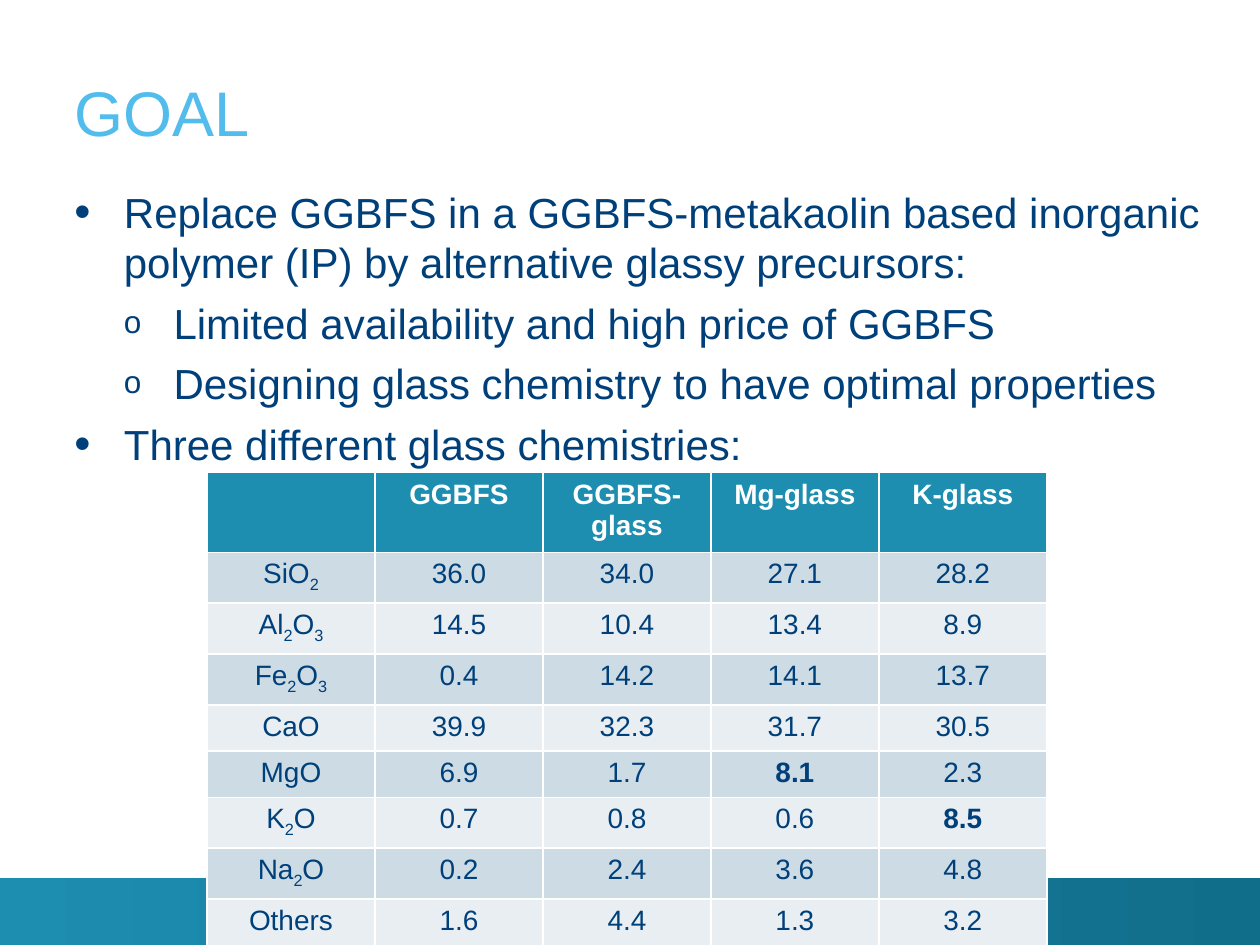
from itertools import groupby

from lxml import etree
from pptx import Presentation
from pptx.dml.color import RGBColor
from pptx.enum import shapes, text
from pptx.oxml import ns
from pptx.util import Pt

COLORS = {
    "title": "52BDEC",
    "navy": "00407A",
    "teal": "1D8DB0",
    "deep_teal": "116E8A",
    "band_dark": "CDDBE4",
    "band_light": "E8EEF2",
    "white": "FFFFFF",
}
FONT = "Arial"
LEFT, TEXT_WIDTH = 42.5, 656
BULLETS = [("•", 110), ("o", 75)]
GOALS = [
    (0, "Replace GGBFS in a GGBFS-metakaolin based inorganic polymer (IP) "
        "by alternative glassy precursors:"),
    (1, "Limited availability and high price of GGBFS"),
    (1, "Designing glass chemistry to have optimal properties"),
    (0, "Three different glass chemistries:"),
]
COMPOSITION = [
    ["", "GGBFS", "GGBFS-glass", "Mg-glass", "K-glass"],
    ["SiO2", "36.0", "34.0", "27.1", "28.2"],
    ["Al2O3", "14.5", "10.4", "13.4", "8.9"],
    ["Fe2O3", "0.4", "14.2", "14.1", "13.7"],
    ["CaO", "39.9", "32.3", "31.7", "30.5"],
    ["MgO", "6.9", "1.7", "8.1", "2.3"],
    ["K2O", "0.7", "0.8", "0.6", "8.5"],
    ["Na2O", "0.2", "2.4", "3.6", "4.8"],
    ["Others", "1.6", "4.4", "1.3", "3.2"],
]
KEY_VALUES = {("MgO", 3), ("K2O", 4)}


def rgb(name):
    return RGBColor.from_string(COLORS[name])


def set_font(font, size, color, bold=False):
    font.name, font.size, font.bold = FONT, Pt(size), bold
    font.color.rgb = rgb(color)


def add_xml(parent, tag, **attrs):
    return etree.SubElement(parent, ns.qn(tag), attrs)


def add_footer(slide):
    sp = slide.shapes.add_shape(
        shapes.MSO_SHAPE.RECTANGLE, 0, Pt(501.8), Pt(720), Pt(38.2))
    sp.shadow.inherit = False
    sp.line.fill.background()
    sp.fill.gradient()
    sp.fill.gradient_angle = 0
    for stop, color in zip(sp.fill.gradient_stops, ("teal", "deep_teal")):
        stop.color.rgb = rgb(color)


def add_text_frame(slide, top, height, anchor):
    sp = slide.shapes.add_textbox(Pt(LEFT), Pt(top), Pt(TEXT_WIDTH), Pt(height))
    tf = sp.text_frame
    tf.word_wrap = True
    tf.vertical_anchor = anchor
    tf.margin_left = tf.margin_right = tf.margin_top = tf.margin_bottom = 0
    return tf


def add_title(slide, title):
    tf = add_text_frame(slide, 14.4, 70.6, text.MSO_ANCHOR.BOTTOM)
    p = tf.paragraphs[0]
    p.text = title
    set_font(p.font, 36, "title")


def add_bullets(slide, items):
    tf = add_text_frame(slide, 106.5, 348.5, text.MSO_ANCHOR.TOP)
    for i, (level, line) in enumerate(items):
        p = tf.add_paragraph() if i else tf.paragraphs[0]
        p.text = line
        p.level = level
        p.line_spacing = 1.0
        p.space_before = Pt(5.8 if i else 0)
        char, percent = BULLETS[level]
        pPr = p._p.get_or_add_pPr()
        pPr.set("marL", str(Pt(28.35 * (level + 1))))
        pPr.set("indent", str(-Pt(28.35)))
        add_xml(pPr, "a:buSzPct", val=str(percent * 1000))
        add_xml(pPr, "a:buFont", typeface=FONT)
        add_xml(pPr, "a:buChar", char=char)
        set_font(p.font, 24, "navy")


def write_formula(p, formula):
    for is_digit, chars in groupby(formula, str.isdigit):
        r = p.add_run()
        r.text = "".join(chars)
        if is_digit:
            r._r.get_or_add_rPr().set("baseline", "-25000")


def fill_cell(cell, value, row, col, bold):
    header = row == 0
    cell.fill.solid()
    band = "band_dark" if row % 2 else "band_light"
    cell.fill.fore_color.rgb = rgb("teal" if header else band)
    p = cell.text_frame.paragraphs[0]
    p.alignment = text.PP_ALIGN.CENTER
    if col == 0:
        write_formula(p, value)
    else:
        p.text = value
    set_font(p.font, 16, "white" if header else "navy", header or bold)


def row_height(row, label):
    if row == 0:
        return 43.5
    return 28 if any(c.isdigit() for c in label) else 25.2


def add_composition_table(slide, rows):
    heights = [row_height(i, row[0]) for i, row in enumerate(rows)]
    table = slide.shapes.add_table(
        len(rows), len(rows[0]), Pt(118.3), Pt(270), Pt(480), Pt(sum(heights))).table
    for i, values in enumerate(rows):
        table.rows[i].height = Pt(heights[i])
        for j, value in enumerate(values):
            fill_cell(table.cell(i, j), value, i, j, (values[0], j) in KEY_VALUES)


def main():
    prs = Presentation()
    prs.slide_width, prs.slide_height = Pt(720), Pt(540)
    slide = prs.slides.add_slide(prs.slide_layouts[6])
    add_footer(slide)
    add_title(slide, "GOAL")
    add_bullets(slide, GOALS)
    add_composition_table(slide, COMPOSITION)
    prs.save("out.pptx")


if __name__ == "__main__":
    main()
